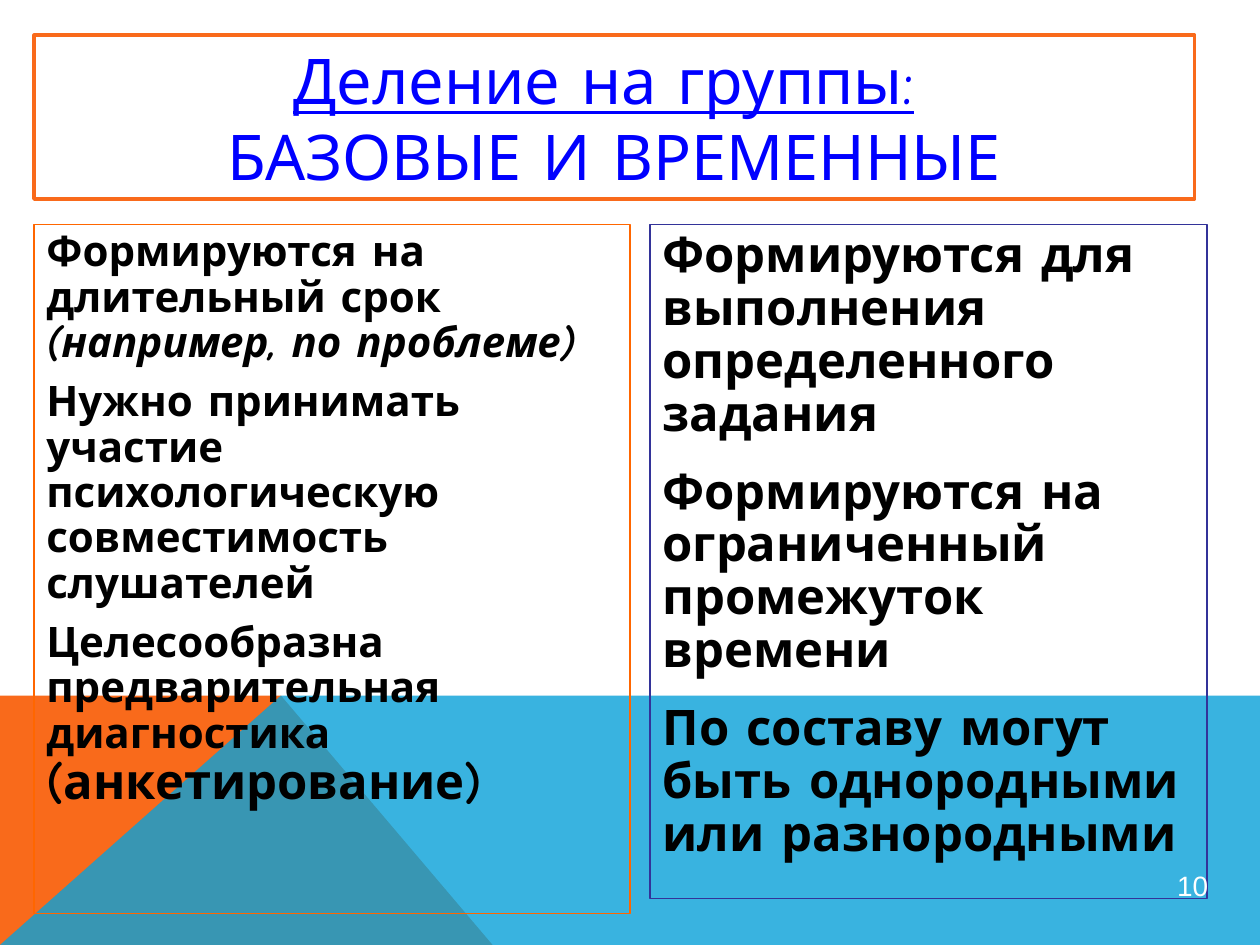
import pptx
import pptx.util
import pptx.oxml
import pptx.oxml.ns
from dataclasses import dataclass
from pptx.dml.color import RGBColor
from pptx.enum.shapes import MSO_SHAPE
from pptx.enum.text import MSO_ANCHOR, PP_ALIGN


@dataclass(frozen=True)
class Theme:
    width: float = 10
    height: float = 7.5
    face: str = "Comic Neue"
    number_face: str = "Arial"
    black: str = "000000"
    white: str = "FFFFFF"
    blue: str = "0000FF"
    orange: str = "F96A1B"
    sky: str = "08A1D9"
    left_frame: str = "FF6600"
    right_frame: str = "333399"
    title_size: int = 36
    large: int = 28
    body: int = 24
    small: int = 16


THEME = Theme()
MARGIN = 0.27
COLUMN_TOP = 1.78
BAND_TOP = 5.52
PEAK = 2.23


def set_values(target, values):
    for name, value in values.items():
        setattr(target, name, value)


def paint(fill, color):
    fill.solid()
    fill.fore_color.rgb = RGBColor.from_string(color)


def add_band(page, points, color, alpha=None):
    """Draw a borderless polygon from points in inches."""
    corners = [tuple(pptx.util.Inches(value) for value in point) for point in points]
    builder = page.shapes.build_freeform(*corners[0])
    builder.add_line_segments(corners[1:], close=True)
    band = builder.convert_to_shape()
    band.shadow.inherit = False
    band.line.fill.background()
    paint(band.fill, color)
    if alpha is not None:
        tint = band.fill._xPr.find(".//" + pptx.oxml.ns.qn("a:srgbClr"))
        opacity = pptx.oxml.parse_xml(
            f'<a:alpha {pptx.oxml.ns.nsdecls("a")} val="{alpha * 1000}"/>')
        tint.append(opacity)


def add_box(page, place, line=None, weight=1, fill=None,
            kind=MSO_SHAPE.RECTANGLE, anchor=MSO_ANCHOR.TOP, inset=None):
    box = page.shapes.add_shape(kind, *(pptx.util.Inches(value) for value in place))
    box.shadow.inherit = False
    if fill:
        paint(box.fill, fill)
    else:
        box.fill.background()
    if line:
        paint(box.line.fill, line)
        box.line.width = pptx.util.Pt(weight)
    else:
        box.line.fill.background()
    set_values(box.text_frame, {"word_wrap": True, "vertical_anchor": anchor})
    if inset is not None:
        sides = ("left", "right", "top", "bottom")
        set_values(box.text_frame,
                   {f"margin_{side}": pptx.util.Inches(inset) for side in sides})
    return box


def add_span(para, text, size, color=THEME.black, face=THEME.face, **styles):
    span = para.add_run()
    span.text = text
    set_values(span.font, {"size": pptx.util.Pt(size), "name": face, **styles})
    span.font.color.rgb = RGBColor.from_string(color)


def add_column(page, place, line, paragraphs, gap):
    """Fill a framed column; each paragraph is a list of (text, size, styles)."""
    frame = add_box(page, place, line, 0.75).text_frame
    for index, spans in enumerate(paragraphs):
        para = frame.add_paragraph() if index else frame.paragraphs[0]
        set_values(para, {"alignment": PP_ALIGN.LEFT, "line_spacing": 0.9,
                          "space_before": pptx.util.Pt(gap if index else 0)})
        for text, size, styles in spans:
            add_span(para, text, size, bold=True, **styles)


def add_title(page):
    box = add_box(page, (MARGIN, 0.28, 9.21, 1.3), THEME.orange, 2, THEME.white,
                  anchor=MSO_ANCHOR.MIDDLE)
    para = box.text_frame.paragraphs[0]
    para.alignment = PP_ALIGN.CENTER
    add_span(para, "Деление на группы:", THEME.title_size, THEME.blue, underline=True)
    add_span(para, " ", THEME.title_size, THEME.blue)
    para.add_line_break()
    add_span(para, "БАЗОВЫЕ И ВРЕМЕННЫЕ", THEME.title_size, THEME.blue)


def add_number(page, number):
    box = add_box(page, (9.19, 6.75, 0.55, 0.55), kind=MSO_SHAPE.OVAL,
                  anchor=MSO_ANCHOR.MIDDLE, inset=0.01)
    para = box.text_frame.paragraphs[0]
    para.alignment = PP_ALIGN.CENTER
    add_span(para, number, THEME.small, THEME.white, THEME.number_face)


def main():
    deck = pptx.Presentation()
    set_values(deck, {"slide_width": pptx.util.Inches(THEME.width),
                      "slide_height": pptx.util.Inches(THEME.height)})
    page = deck.slides.add_slide(deck.slide_layouts[6])

    # Overlapping bands at the foot
    corner, peak = (0, THEME.height), (PEAK, BAND_TOP)
    add_band(page, [corner, (0, BAND_TOP), peak, (3.91, THEME.height)], THEME.orange)
    add_band(page, [corner, peak, (THEME.width, BAND_TOP),
                    (THEME.width, THEME.height)], THEME.sky, alpha=80)

    # Base groups
    add_column(page, (MARGIN, COLUMN_TOP, 4.73, 5.47), THEME.left_frame, [
        [("Формируются на длительный срок ", THEME.body, {}),
         ("(например, по проблеме)", THEME.body, {"italic": True})],
        [("Нужно принимать участие психологическую совместимость слушателей",
          THEME.body, {})],
        [("Целесообразна предварительная диагностика ", THEME.body, {}),
         ("(анкетирование)", THEME.large, {})],
    ], gap=8)

    # Temporary groups
    temporary = ["Формируются для выполнения определенного задания",
                 "Формируются на ограниченный промежуток времени",
                 "По составу могут быть однородными или разнородными"]
    add_column(page, (5.16, COLUMN_TOP, 4.42, 5.35), THEME.right_frame,
               [[(text, THEME.large, {})] for text in temporary],
               gap=THEME.large / 2)

    # Title and page number
    add_title(page)
    add_number(page, "10")
    deck.save("out.pptx")


if __name__ == "__main__":
    main()
